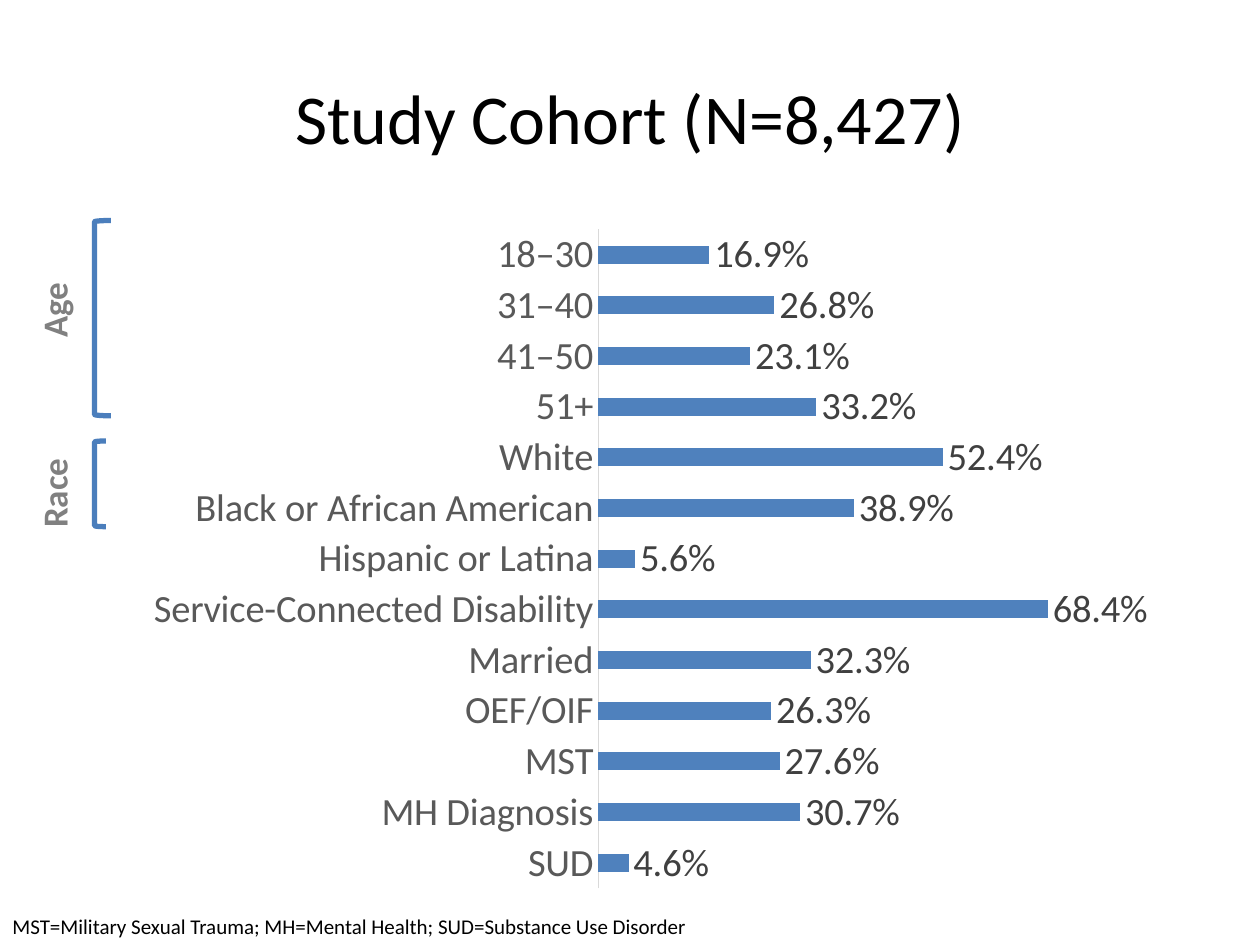
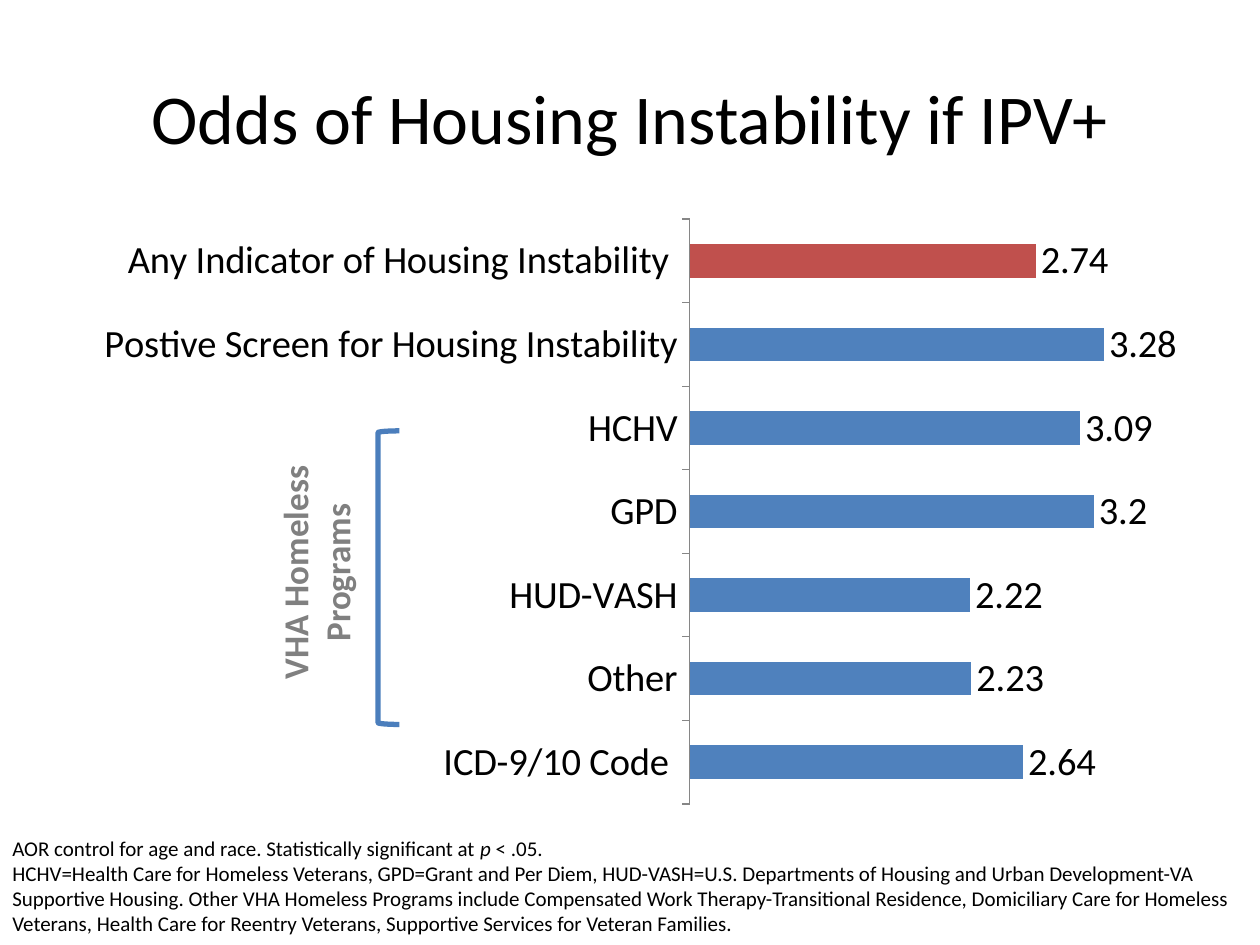
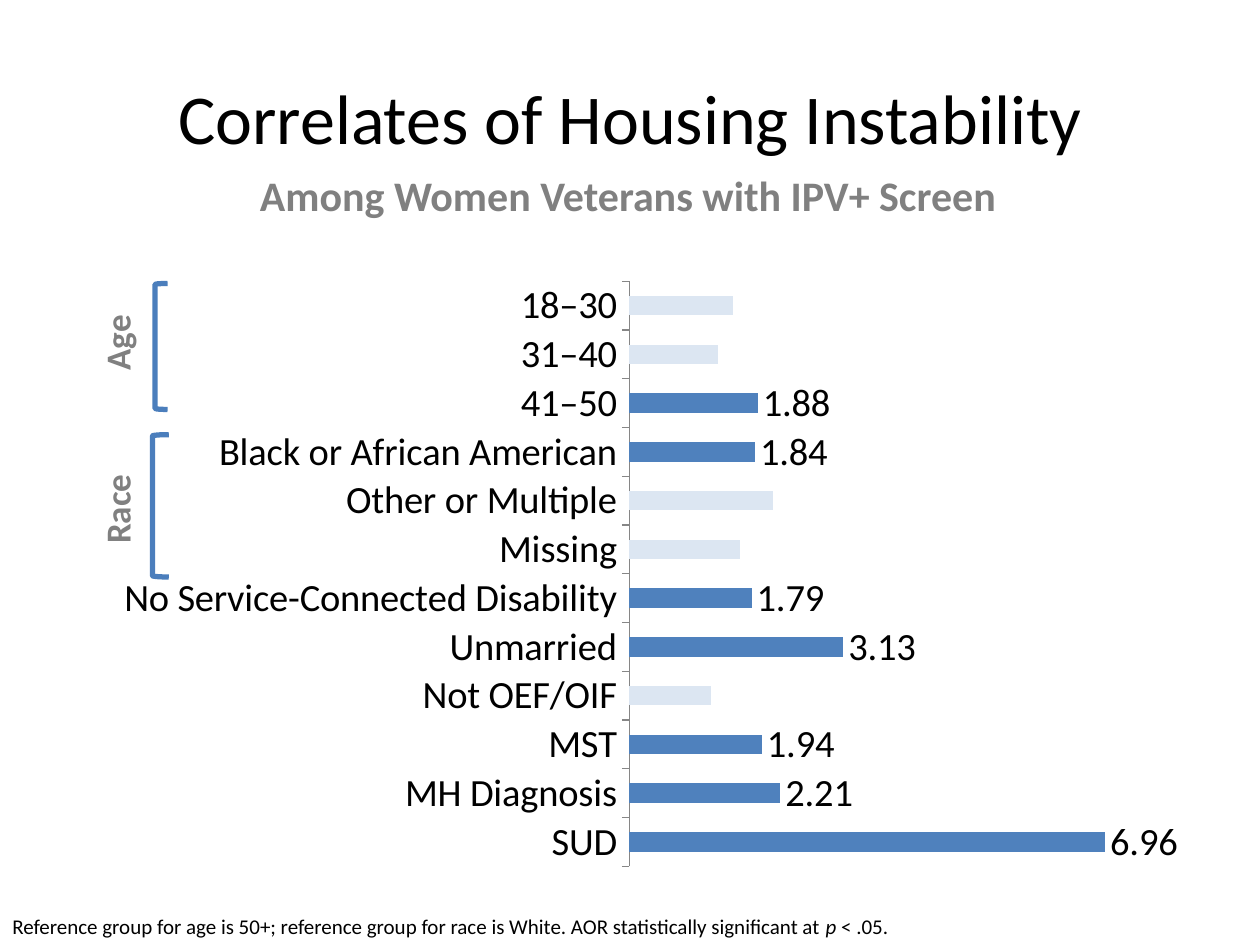
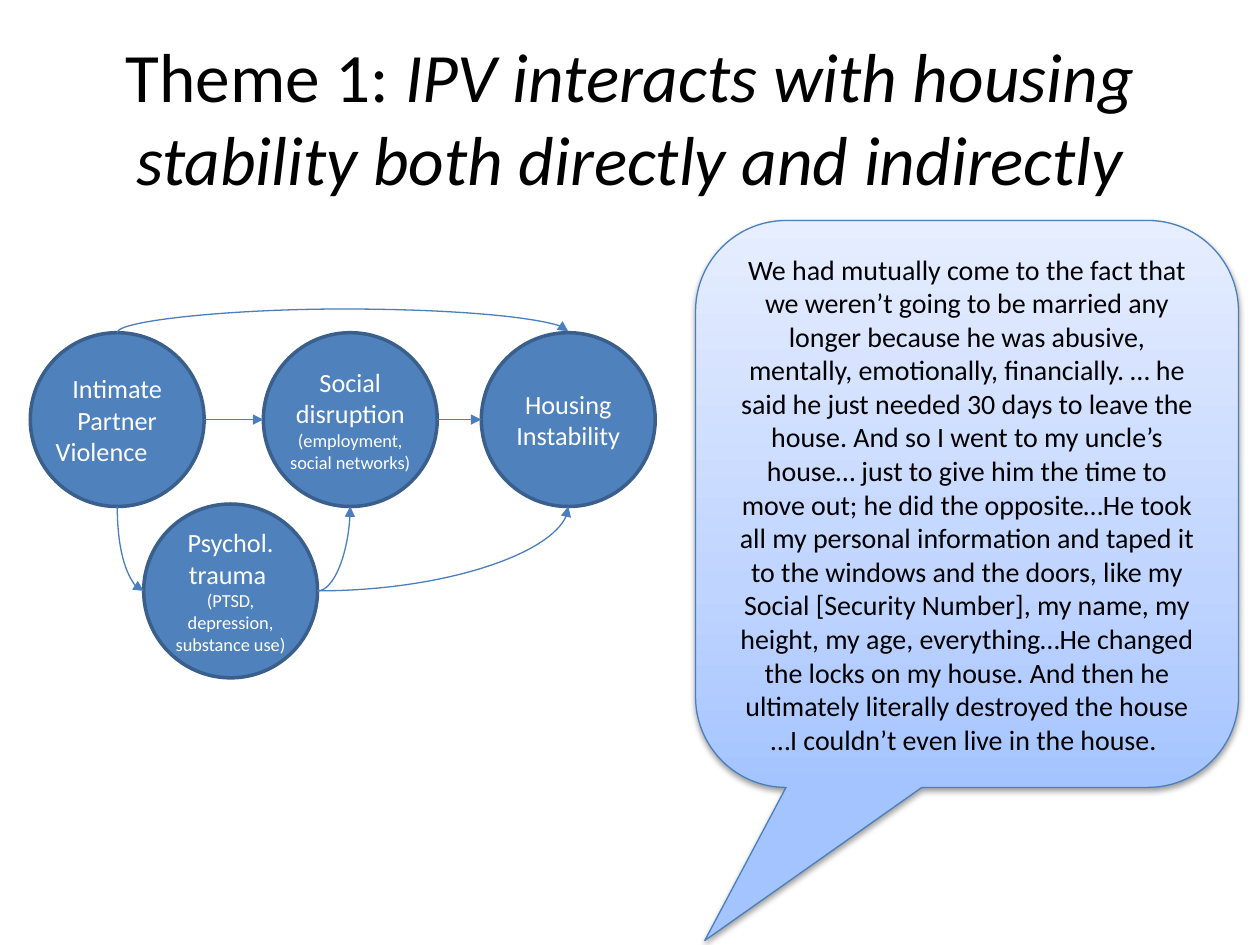
import pptx
import pptx.chart.data
import pptx.dml.color
import pptx.enum.chart
import pptx.enum.shapes
import pptx.enum.text
import pptx.oxml
import pptx.oxml.ns
import pptx.util
from pptx.util import Inches

FONT = "Calibri"
BLACK, WHITE, GRAY = "000000", "FFFFFF", "808080"
BLUE, RED, PALE = "4F81BD", "C0504D", "DCE6F2"
LINE_BLUE, CIRCLE_EDGE, AXIS_GRAY = "4B7EBC", "3A5F8C", "868686"
CIRCLE = 1.38
CENTER = pptx.enum.text.PP_ALIGN.CENTER
SHAPES = pptx.enum.shapes.MSO_SHAPE
qn = pptx.oxml.ns.qn

# Rows run from the bottom bar to the top bar
COHORT = [
    ("SUD", 0.046), ("MH Diagnosis", 0.307), ("MST", 0.276), ("OEF/OIF", 0.263),
    ("Married", 0.323), ("Service-Connected Disability", 0.684),
    ("Hispanic or Latina", 0.056), ("Black or African American", 0.389),
    ("White", 0.524), ("51+", 0.332), ("41–50", 0.231), ("31–40", 0.268),
    ("18–30", 0.169),
]
ODDS = [
    ("ICD-9/10 Code ", 2.64), ("Other", 2.23), ("HUD-VASH", 2.22), ("GPD", 3.2),
    ("HCHV", 3.09), ("Postive Screen for Housing Instability", 3.28),
    ("Any Indicator of Housing Instability ", 2.74),
]
CORRELATES = [
    ("SUD", 6.96), ("MH Diagnosis", 2.21), ("MST", 1.94), ("Not OEF/OIF", 1.19),
    ("Unmarried", 3.13), ("No Service-Connected Disability", 1.79),
    ("Missing", 1.62), ("Other or Multiple", 2.1),
    ("Black or African American", 1.84), ("41–50", 1.88), ("31–40", 1.29),
    ("18–30", 1.51),
]
NOT_SIGNIFICANT = [3, 6, 7, 10, 11]

QUOTE = (
    "We had mutually come to the fact that we weren’t going to be married any "
    "longer because he was abusive, mentally, emotionally, financially. … he said "
    "he just needed 30 days to leave the house. And so I went to my uncle’s house… "
    "just to give him the time to move out; he did the opposite…He took all my "
    "personal information and taped it to the windows and the doors, like my Social "
    "[Security Number], my name, my height, my age, everything…He changed the locks "
    "on my house. And then he ultimately literally destroyed the house …I couldn’t "
    "even live in the house. "
)
PROGRAMS = (
    "HCHV=Health Care for Homeless Veterans, GPD=Grant and Per Diem, "
    "HUD-VASH=U.S. Departments of Housing and Urban Development-VA Supportive "
    "Housing. Other VHA Homeless Programs include Compensated Work "
    "Therapy-Transitional Residence, Domiciliary Care for Homeless Veterans, Health "
    "Care for Reentry Veterans, Supportive Services for Veteran Families."
)


def color(value):
    return pptx.dml.color.RGBColor.from_string(value)


def drawing_xml(text):
    """Parse a fragment whose root lies in the drawing namespace."""
    head, rest = text.split(">", 1)
    return pptx.oxml.parse_xml(f"{head} {pptx.oxml.ns.nsdecls('a')}>{rest}")


def style_font(font, size, value=BLACK, bold=False, italic=False):
    font.name, font.size = FONT, pptx.util.Pt(size)
    font.bold, font.italic = bold, italic
    font.color.rgb = color(value)


def add_span(para, text, size, value=BLACK, bold=False, italic=False):
    span = para.add_run()
    span.text = text
    style_font(span.font, size, value, bold, italic)


def set_line(line, value, width):
    line.color.rgb = color(value)
    line.width = pptx.util.Pt(width)


def new_page(deck, spans, size=40):
    """Add a slide with its title; spans are (text, italic) pairs."""
    page = deck.slides.add_slide(deck.slide_layouts[5])
    title = page.shapes.title
    title.left, title.top = Inches(0.5), Inches(0.3)
    title.width, title.height = Inches(9), Inches(1.25)
    para = title.text_frame.paragraphs[0]
    para.alignment = CENTER
    for text, italic in spans:
        add_span(para, text, size, italic=italic)
    return page


def add_text_box(page, left, top, width, height, grow=True):
    box = page.shapes.add_textbox(*map(Inches, (left, top, width, height)))
    box.text_frame.word_wrap = True
    if grow:
        box.text_frame.auto_size = pptx.enum.text.MSO_AUTO_SIZE.SHAPE_TO_FIT_TEXT
    return box


def add_footnote(page, top, height, paragraphs):
    frame = add_text_box(page, 0, top, 10, height).text_frame
    for index, spans in enumerate(paragraphs):
        para = frame.add_paragraph() if index else frame.paragraphs[0]
        for text, italic in spans:
            add_span(para, text, 12, italic=italic)


def add_group_mark(page, text, label_at, bracket_at):
    """A bracket with a gray label that reads upward beside it."""
    bracket = page.shapes.add_shape(SHAPES.LEFT_BRACKET, *map(Inches, bracket_at))
    bracket.shadow.inherit = False
    bracket.fill.background()
    set_line(bracket.line, LINE_BLUE, 3)
    box = add_text_box(page, *label_at)
    box._element.txBody.find(qn("a:bodyPr")).set("vert", "vert270")
    para = box.text_frame.paragraphs[0]
    para.alignment = CENTER
    add_span(para, text, 20, GRAY, bold=True)


def place_plot(chart, x, y, width, height):
    layout = "".join(
        f'<c:{tag} val="{value}"/>' for tag, value in (
            ("layoutTarget", "inner"), ("xMode", "edge"), ("yMode", "edge"),
            ("x", x), ("y", y), ("w", width), ("h", height)))
    area = chart._chartSpace.chart.plotArea
    for old in area.findall(qn("c:layout")):
        area.remove(old)
    area.insert(0, pptx.oxml.parse_xml(
        f"<c:layout {pptx.oxml.ns.nsdecls('c')}>"
        f"<c:manualLayout>{layout}</c:manualLayout></c:layout>"))


def add_bars(page, at, rows, plot_at, top_value, number_format="General", gap=150,
             ticks=True, text_color=BLACK, label_color=BLACK, axis_color=AXIS_GRAY):
    """A one-series bar chart with labels at the bar ends and no value axis."""
    data = pptx.chart.data.CategoryChartData()
    data.categories = [name for name, _ in rows]
    data.add_series("Series 1", [value for _, value in rows])
    chart = page.shapes.add_chart(
        pptx.enum.chart.XL_CHART_TYPE.BAR_CLUSTERED, *map(Inches, at), data).chart
    chart.has_legend = chart.has_title = False
    style_font(chart.font, 10)
    place_plot(chart, *plot_at)

    marks = pptx.enum.chart.XL_TICK_MARK
    names = chart.category_axis
    names.major_tick_mark = marks.OUTSIDE if ticks else marks.NONE
    names.minor_tick_mark = marks.NONE
    names.has_major_gridlines = False
    style_font(names.tick_labels.font, 22, text_color)
    set_line(names.format.line, axis_color, 0.75)
    values = chart.value_axis
    values.visible = values.has_major_gridlines = False
    values.minimum_scale, values.maximum_scale = 0, top_value

    plot = chart.plots[0]
    plot.gap_width = gap
    plot.vary_by_categories = False
    series = plot.series[0]
    series.format.fill.solid()
    series.format.fill.fore_color.rgb = color(BLUE)
    labels = series.data_labels
    labels.show_value = True
    labels.position = pptx.enum.chart.XL_LABEL_POSITION.OUTSIDE_END
    labels.number_format = number_format
    labels.number_format_is_linked = False
    style_font(labels.font, 22, label_color)
    return series


def paint_bar(series, index, value):
    fill = series.points[index].format.fill
    fill.solid()
    fill.fore_color.rgb = color(value)


def hide_labels(series, indexes):
    for index in sorted(indexes, reverse=True):
        series.data_labels._element.insert(0, pptx.oxml.parse_xml(
            f"<c:dLbl {pptx.oxml.ns.nsdecls('c')}>"
            f'<c:idx val="{index}"/><c:delete val="1"/></c:dLbl>'))


def add_circle(page, left, top, lines):
    """A concept circle; lines are (text, size) pairs, one paragraph each."""
    circle = page.shapes.add_shape(
        SHAPES.OVAL, *map(Inches, (left, top, CIRCLE, CIRCLE)))
    circle.shadow.inherit = False
    circle.fill.solid()
    circle.fill.fore_color.rgb = color(BLUE)
    set_line(circle.line, CIRCLE_EDGE, 2)
    frame = circle.text_frame
    frame.word_wrap = True
    frame.margin_left = frame.margin_right = 0
    frame.vertical_anchor = pptx.enum.text.MSO_ANCHOR.MIDDLE
    for index, (text, size) in enumerate(lines):
        para = frame.add_paragraph() if index else frame.paragraphs[0]
        para.alignment = CENTER
        add_span(para, text, size, WHITE)


def add_arrow(page, start, end, preset=None, turn=0, bulge=None):
    """An arrow; a curve's frame may be turned by 90 or 270 degrees."""
    middle = [(a + b) / 2 for a, b in zip(start, end)]
    sign = {0: 0, 90: 1, 270: -1}[turn]

    def unturned(point):
        if not sign:
            return point
        dx, dy = point[0] - middle[0], point[1] - middle[1]
        return middle[0] + sign * dy, middle[1] - sign * dx

    kinds = pptx.enum.shapes.MSO_CONNECTOR
    arrow = page.shapes.add_connector(
        kinds.CURVE if preset else kinds.STRAIGHT,
        *map(Inches, (*unturned(start), *unturned(end))))
    set_line(arrow.line, LINE_BLUE, 0.75)
    properties = arrow._element.spPr
    if preset:
        geometry = properties.find(qn("a:prstGeom"))
        geometry.set("prst", preset)
        if bulge:
            guides = geometry.find(qn("a:avLst"))
            guides.append(drawing_xml(
                f'<a:gd name="adj1" fmla="val {bulge * 100000}"></a:gd>'))
    if turn:
        properties.find(qn("a:xfrm")).set("rot", str(turn * 60000))
    properties.find(qn("a:ln")).append(
        drawing_xml('<a:tailEnd type="triangle"></a:tailEnd>'))
    properties.append(drawing_xml("<a:effectLst></a:effectLst>"))


def add_quote(page):
    """A speech bubble with a blue gradient and a soft shadow."""
    bubble = page.shapes.add_shape(
        SHAPES.ROUNDED_RECTANGULAR_CALLOUT, *map(Inches, (5.52, 1.75, 4.31, 4.5)))
    for index, value in enumerate((-0.483, 0.77, 0.167)):
        bubble.adjustments[index] = value
    set_line(bubble.line, LINE_BLUE, 0.75)
    stops = "".join(
        f'<a:gs pos="{place * 1000}"><a:srgbClr val="{value}"/></a:gs>'
        for place, value in ((0, "A4C4FF"), (35, "BFD4FF"), (100, "E6EEFF")))
    properties = bubble._element.spPr
    properties.find(qn("a:prstGeom")).addnext(drawing_xml(
        f"<a:gradFill><a:gsLst>{stops}</a:gsLst>"
        '<a:lin ang="16200000" scaled="0"/></a:gradFill>'))
    properties.append(drawing_xml(
        '<a:effectLst><a:outerShdw blurRad="40000" dist="20000" dir="5400000" '
        f'rotWithShape="0"><a:srgbClr val="{BLACK}"><a:alpha val="38000"/>'
        "</a:srgbClr></a:outerShdw></a:effectLst>"))
    frame = bubble.text_frame
    frame.word_wrap = True
    frame.vertical_anchor = pptx.enum.text.MSO_ANCHOR.MIDDLE
    para = frame.paragraphs[0]
    para.alignment = CENTER
    add_span(para, QUOTE, 16)


def cohort_page(deck):
    page = new_page(deck, [("Study Cohort (N=8,427)", False)])
    add_bars(page, (0.75, 1.67, 8.75, 5.53), COHORT, (0.457, 0.027, 0.477, 0.946),
             0.8, "0.0%", 182, False, "595959", "404040", "D9D9D9")
    add_group_mark(page, "Age", (0.21, 1.67, 0.54, 1.58), (0.75, 1.75, 0.13, 1.55))
    add_group_mark(page, "Race", (0.21, 3.25, 0.54, 1.33), (0.75, 3.5, 0.09, 0.68))
    add_footnote(page, 7.2, 0.3, [[(
        "MST=Military Sexual Trauma; MH=Mental Health; SUD=Substance Use Disorder",
        False)]])


def odds_page(deck):
    page = new_page(deck, [("Odds of Housing Instability if IPV+", False)])
    series = add_bars(page, (-0.83, 1.63, 10.17, 4.95), ODDS,
                      (0.62, 0.022, 0.345, 0.938), 3.5)
    paint_bar(series, len(ODDS) - 1, RED)
    add_group_mark(page, "VHA Homeless Programs",
                   (2.12, 3.42, 0.88, 2.25), (3, 3.42, 0.17, 2.33))
    add_footnote(page, 6.58, 0.91, [
        [("AOR control for age and race. Statistically significant at ", False),
         ("p", True), (" < .05.", False)],
        [(PROGRAMS, False)],
    ])


def correlates_page(deck):
    page = new_page(deck, [("Correlates of Housing Instability", False)])
    add_group_mark(page, "Age", (0.71, 2.21, 0.54, 1.02), (1.23, 2.25, 0.1, 1))
    add_group_mark(page, "Race", (0.71, 3.5, 0.54, 1.08), (1.21, 3.45, 0.13, 1.13))
    add_footnote(page, 7.2, 0.3, [[
        ("Reference group for age is 50+; reference group for race is White. "
         "AOR statistically significant at ", False),
        ("p", True), (" < .05.", False)]])
    series = add_bars(page, (0.5, 2.08, 8.99, 4.95), CORRELATES,
                      (0.5, 0.031, 0.483, 0.938), 8, "0.00")
    for index in NOT_SIGNIFICANT:
        paint_bar(series, index, PALE)
    hide_labels(series, NOT_SIGNIFICANT)
    subtitle = add_text_box(page, 0.97, 1.3, 8.03, 0.53, grow=False)
    para = subtitle.text_frame.paragraphs[0]
    para.alignment = CENTER
    add_span(para, "Among Women Veterans with IPV+ Screen", 24, GRAY, bold=True)


def theme_page(deck):
    page = new_page(deck, [
        ("Theme 1: ", False),
        ("IPV interacts with housing stability both directly and indirectly", True),
    ], 39.6)
    # Circles: three in a row, trauma below
    row, low = 2.64, 4
    violence, social, housing, trauma = 0.24, 2.09, 3.82, 1.14
    add_circle(page, violence, row, [("Intimate Partner Violence\t", 15)])
    add_circle(page, social, row, [("Social disruption", 15),
                                   ("(employment, social networks)", 10.5)])
    add_circle(page, trauma, low, [("Psychol. trauma ", 15),
                                   ("(PTSD, depression, substance use)", 10.5)])
    add_circle(page, housing, row, [("Housing Instability", 15)])

    # Arrows between the circles
    half = CIRCLE / 2
    middle, bottom, low_middle = row + half, row + CIRCLE, low + half
    for source, target in ((violence, social), (social, housing)):
        add_arrow(page, (source + CIRCLE, middle), (target, middle))
    add_arrow(page, (violence + half, bottom), (trauma, low_middle),
              "curvedConnector2", 270)
    for target in (social, housing):
        add_arrow(page, (trauma + CIRCLE, low_middle), (target + half, bottom),
                  "curvedConnector2")
    add_arrow(page, (violence + half, row), (housing + half, row - 0.01),
              "curvedConnector3", 90, 19)
    add_quote(page)


def main():
    deck = pptx.Presentation()
    deck.slide_width, deck.slide_height = Inches(10), Inches(7.5)
    cohort_page(deck)
    odds_page(deck)
    correlates_page(deck)
    theme_page(deck)
    deck.save("out.pptx")


if __name__ == "__main__":
    main()
